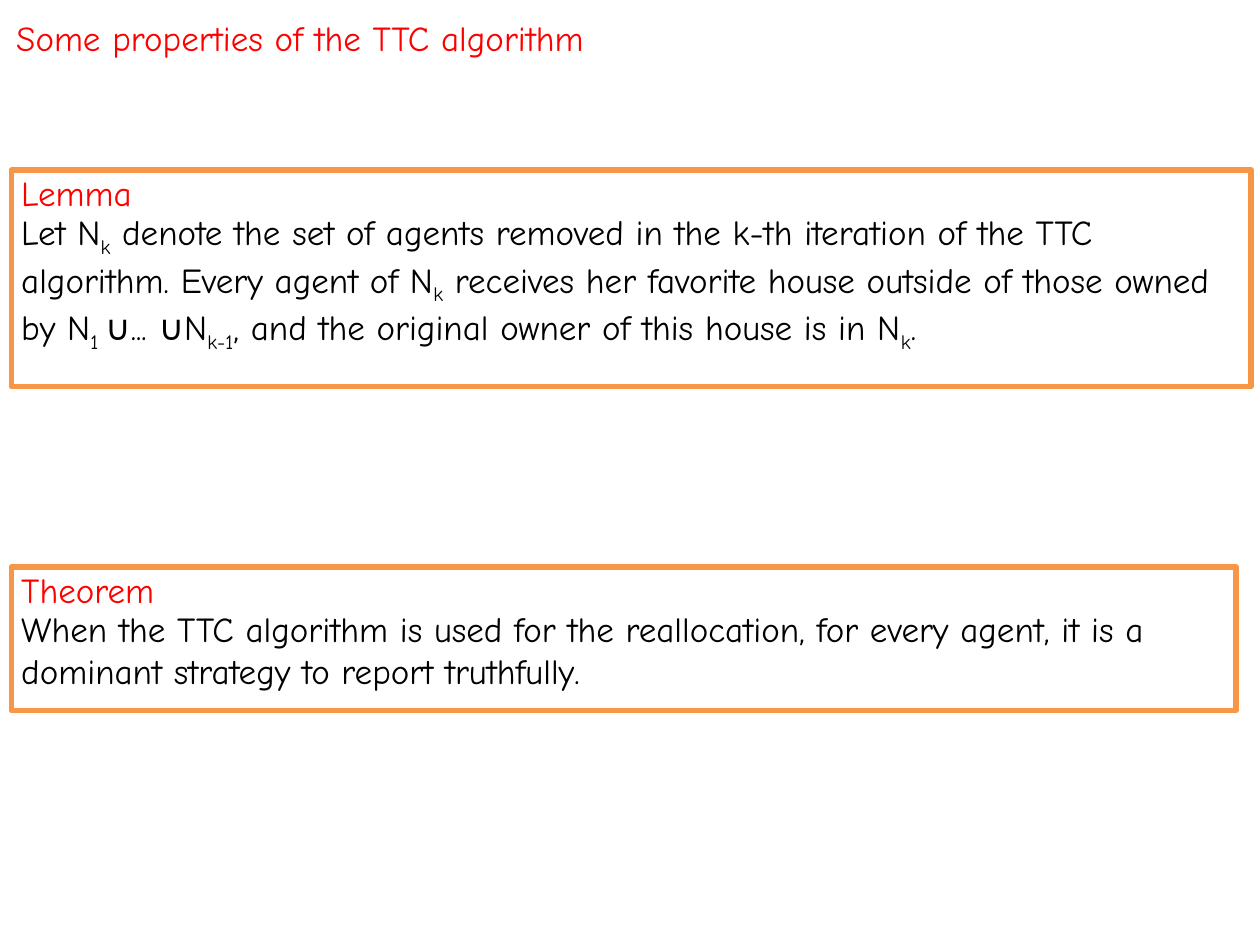
from pptx import Presentation
from pptx import util as u
from pptx.dml.color import RGBColor
from pptx.enum import shapes, text

COLORS = {"heading": "FF0000", "body": "000000", "frame": "F79646"}
FONT = "Comic Neue"
SUBSCRIPT = "-25000"

LEMMA = [
    ("Let N", False), ("k", True),
    (" denote the set of agents removed in the k-th iteration of the TTC "
     "algorithm. Every agent of N", False), ("k", True),
    (" receives her favorite house outside of those owned by N", False),
    ("1 ", True), ("∪... ∪N", False), ("k-1", True),
    (", and the original owner of this house is in N", False),
    ("k", True), (".", False),
]
THEOREM = [
    ("When the TTC algorithm is used for the reallocation, for every agent, "
     "it is a dominant strategy to report truthfully.", False),
]


def add_text(page, left, top, width, height, spans, color):
    """Add a wrapped text box from (wording, is_subscript) pairs."""
    box = page.shapes.add_textbox(*map(u.Inches, (left, top, width, height)))
    frame = box.text_frame
    frame.word_wrap = True
    frame.auto_size = text.MSO_AUTO_SIZE.SHAPE_TO_FIT_TEXT
    para = frame.paragraphs[0]
    for wording, is_subscript in spans:
        span = para.add_run()
        span.text = wording
        span.font.name = FONT
        span.font.size = u.Pt(20)
        span.font.color.rgb = RGBColor.from_string(COLORS[color])
        if is_subscript:
            span.font._element.set("baseline", SUBSCRIPT)


def add_statement(page, left, top, width, height, name, spans, body_height):
    """Add a framed statement with its name above its wording."""
    text_left = left - 0.02
    add_text(page, text_left, top - 0.04, 9.18, 0.44, [(name, False)], "heading")
    add_text(page, text_left, top + 0.27, 9.85, body_height, spans, "body")
    frame = page.shapes.add_shape(
        shapes.MSO_SHAPE.RECTANGLE, *map(u.Inches, (left, top, width, height)))
    frame.shadow.inherit = False
    frame.fill.background()
    frame.line.color.rgb = RGBColor.from_string(COLORS["frame"])
    frame.line.width = u.Pt(3)


def main():
    """Build and save the slide."""
    deck = Presentation()
    deck.slide_width, deck.slide_height = u.Inches(10), u.Inches(7.5)
    page = deck.slides.add_slide(deck.slide_layouts[6])
    add_text(page, 0.03, 0.08, 9.69, 0.44,
             [("Some properties of the TTC algorithm", False)], "heading")
    add_statement(page, 0.09, 1.35, 9.84, 1.72, "Lemma", LEMMA, 1.11)
    add_statement(page, 0.09, 4.5, 9.72, 1.14, "Theorem", THEOREM, 0.77)
    deck.save("out.pptx")


if __name__ == "__main__":
    main()
